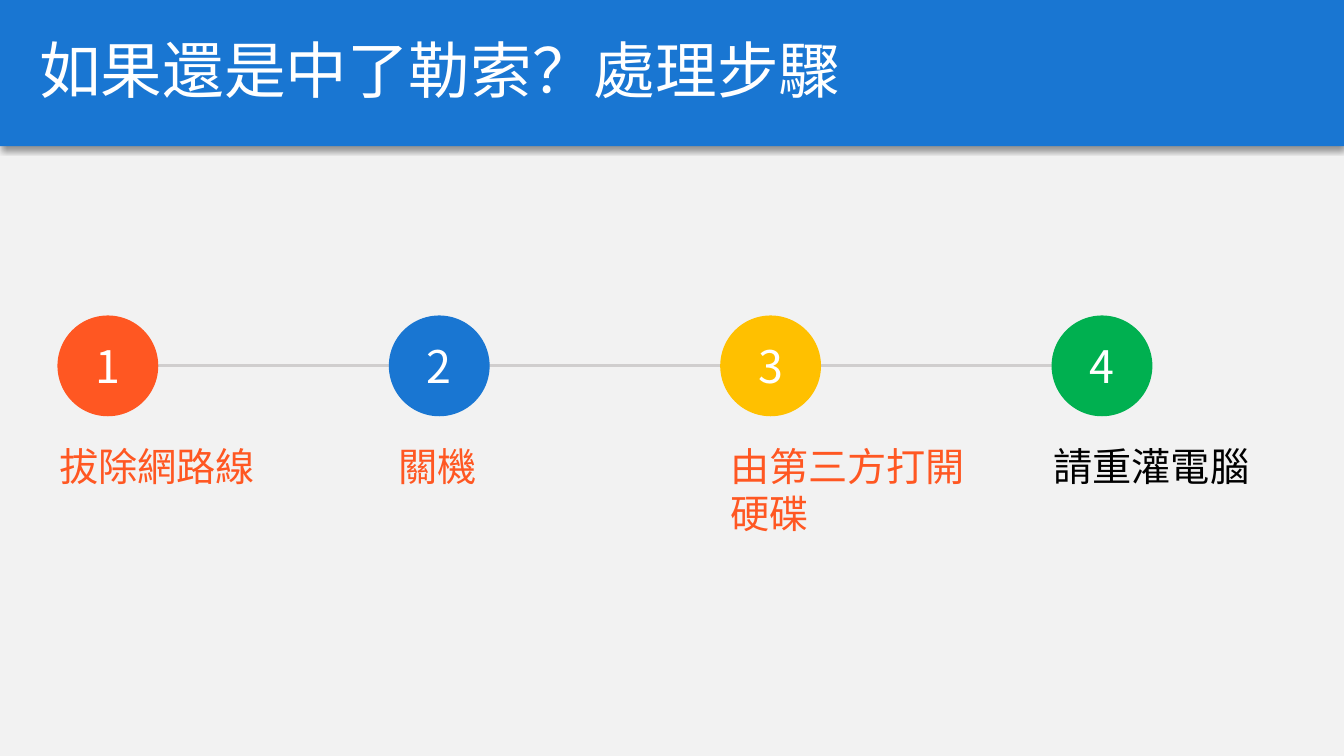
from dataclasses import dataclass

from lxml import etree
from pptx import Presentation
from pptx.dml.color import RGBColor
from pptx.enum.shapes import MSO_CONNECTOR, MSO_SHAPE
from pptx.enum.text import MSO_ANCHOR, MSO_AUTO_SIZE, PP_ALIGN
from pptx.oxml import parse_xml
from pptx.oxml.ns import nsdecls, qn
from pptx.shapes.shapetree import GroupShapes, SlideShapes
from pptx.text.text import TextFrame
from pptx.util import Inches, Pt

BACKGROUND = RGBColor(0xF2, 0xF2, 0xF2)
BLUE = RGBColor(0x19, 0x76, 0xD2)
ORANGE = RGBColor(0xFF, 0x57, 0x22)
YELLOW = RGBColor(0xFF, 0xC0, 0x00)
GREEN = RGBColor(0x00, 0xB0, 0x50)
GRAY = RGBColor(0xD0, 0xCE, 0xCE)
WHITE = RGBColor(0xFF, 0xFF, 0xFF)
BLACK = RGBColor(0x00, 0x00, 0x00)

TITLE_FONT = {"name": "Noto Sans CJK SC", "size": Pt(44)}
NUMBER_FONT = {"name": "Noto Sans CJK TC", "size": Pt(32)}
LABEL_FONT = {"name": "Noto Sans CJK SC", "size": Pt(28)}

FIRST_LEFT, LAST_LEFT = 0.57, 10.43
CIRCLE_TOP, DIAMETER = 3.13, 1.0
LABEL_TOP = 4.34


@dataclass(frozen=True)
class Step:
    lines: tuple[str, ...]
    fill: RGBColor
    label_color: RGBColor
    label_shift: float
    label_width: float
    label_height: float = 0.57


STEPS = (
    Step(("拔除網路線",), ORANGE, ORANGE, -0.08, 2.17),
    Step(("關機",), BLUE, ORANGE, 0, 0.99),
    Step(("由第三方打開", "硬碟"), YELLOW, ORANGE, 0, 2.56, 1.04),
    Step(("請重灌電腦",), GREEN, BLACK, -0.08, 2.17),
)
PITCH = (LAST_LEFT - FIRST_LEFT) / (len(STEPS) - 1)


def write(frame: TextFrame, lines: tuple[str, ...], look: dict,
          color: RGBColor, align: PP_ALIGN) -> None:
    """Fill a text frame, one paragraph per line."""
    frame.text = "\n".join(lines)
    for paragraph in frame.paragraphs:
        paragraph.alignment = align
        run = paragraph.runs[0]
        for key, value in look.items():
            setattr(run.font, key, value)
        run.font.color.rgb = color
        # Chinese glyphs take the East Asian typeface
        latin = run.font._element.find(qn("a:latin"))
        east_asian = etree.Element(qn("a:ea"), typeface=look["name"])
        latin.addnext(east_asian)


def draw_title(shapes: SlideShapes) -> None:
    title = shapes.title
    title.left, title.top = Inches(0), Inches(0)
    title.width, title.height = Inches(13.33), Inches(1.45)
    title.fill.solid()
    title.fill.fore_color.rgb = BLUE
    title._element.spPr.append(parse_xml(
        f'<a:effectLst {nsdecls("a")}>'
        f'<a:outerShdw blurRad="{Pt(4)}" dist="{Pt(3)}" dir="5400000" '
        'algn="t" rotWithShape="0"><a:srgbClr val="000000">'
        '<a:alpha val="40000"/></a:srgbClr></a:outerShdw></a:effectLst>'))
    frame = title.text_frame
    write(frame, ("如果還是中了勒索？處理步驟",), TITLE_FONT, WHITE, PP_ALIGN.LEFT)
    frame.auto_size = MSO_AUTO_SIZE.NONE
    frame.vertical_anchor = MSO_ANCHOR.MIDDLE
    heading = frame.paragraphs[0]
    heading.line_spacing = 0.9
    properties = heading._p.get_or_add_pPr()
    properties.set("marL", "0")
    properties.set("indent", str(Inches(0.29)))


def draw_track(shapes: GroupShapes) -> None:
    middle = Inches(CIRCLE_TOP + DIAMETER / 2)
    track = shapes.add_connector(
        MSO_CONNECTOR.STRAIGHT, Inches(FIRST_LEFT + DIAMETER / 2), middle,
        Inches(LAST_LEFT + DIAMETER / 2 + 0.36), middle)
    track.end_x = Inches(11.29)
    track.line.color.rgb = GRAY
    track.line.width = Pt(2.25)
    etree.SubElement(track._element.spPr, qn("a:effectLst"))


def draw_circle(shapes: GroupShapes, number: int, left: float, fill: RGBColor) -> None:
    circle = shapes.add_shape(
        MSO_SHAPE.OVAL, Inches(left), Inches(CIRCLE_TOP),
        Inches(DIAMETER), Inches(DIAMETER))
    circle.shadow.inherit = False
    circle.fill.solid()
    circle.fill.fore_color.rgb = fill
    circle.line.fill.background()
    circle.text_frame.vertical_anchor = MSO_ANCHOR.MIDDLE
    write(circle.text_frame, (str(number),), NUMBER_FONT, WHITE, PP_ALIGN.CENTER)


def draw_label(shapes: SlideShapes, step: Step, left: float) -> None:
    label = shapes.add_textbox(
        Inches(left + step.label_shift), Inches(LABEL_TOP),
        Inches(step.label_width), Inches(step.label_height))
    frame = label.text_frame
    frame.word_wrap = False
    frame.auto_size = MSO_AUTO_SIZE.SHAPE_TO_FIT_TEXT
    write(frame, step.lines, LABEL_FONT, step.label_color, PP_ALIGN.LEFT)


def main() -> None:
    deck = Presentation()
    deck.slide_width, deck.slide_height = Inches(13.33), Inches(7.5)
    slide = deck.slides.add_slide(deck.slide_layouts.get_by_name("Title Only"))
    slide.background.fill.solid()
    slide.background.fill.fore_color.rgb = BACKGROUND

    # Title band
    draw_title(slide.shapes)

    # Numbered timeline with its labels
    timeline = slide.shapes.add_group_shape().shapes
    draw_track(timeline)
    for index, step in enumerate(STEPS):
        left = FIRST_LEFT + index * PITCH
        draw_circle(timeline, index + 1, left, step.fill)
        draw_label(slide.shapes, step, left)

    deck.save("out.pptx")


if __name__ == "__main__":
    main()
